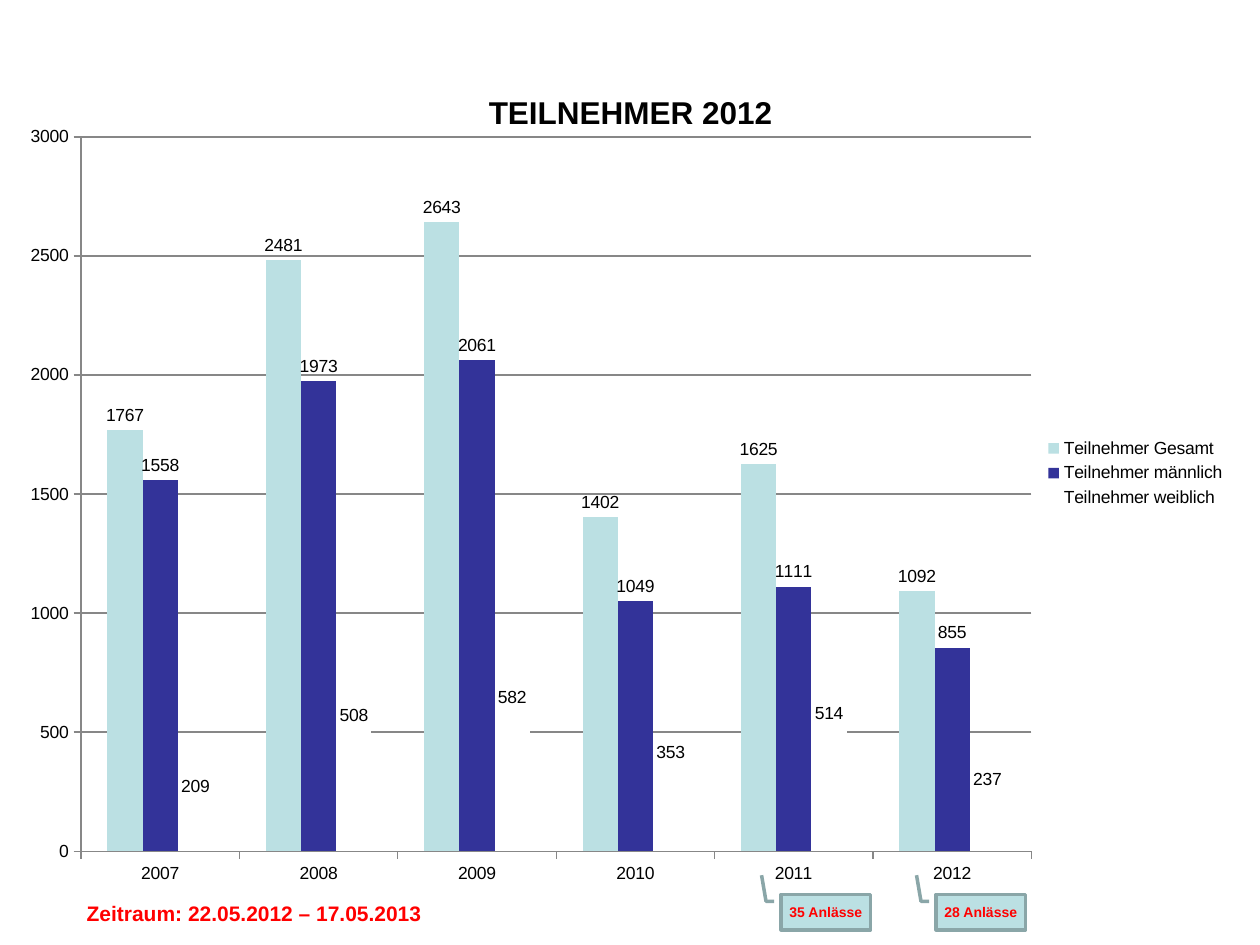
from pptx import Presentation, util as u
from pptx.chart.data import CategoryChartData
from pptx.dml.color import RGBColor
from pptx.enum import chart as ch, shapes, text
from pptx.oxml import parse_xml
from pptx.oxml.ns import nsdecls, qn

BLACK = RGBColor(0x00, 0x00, 0x00)
RED = RGBColor(0xFF, 0x00, 0x00)
AQUA = RGBColor(0xBB, 0xE0, 0xE3)
NAVY = RGBColor(0x33, 0x33, 0x99)
WHITE = RGBColor(0xFF, 0xFF, 0xFF)
SLATE = RGBColor(0x8A, 0xA6, 0xA8)
GREY = RGBColor(0x87, 0x87, 0x87)

YEARS = ["2007", "2008", "2009", "2010", "2011", "2012"]
PARTICIPANTS = [
    ("Teilnehmer Gesamt", AQUA, (1767, 2481, 2643, 1402, 1625, 1092)),
    ("Teilnehmer männlich", NAVY, (1558, 1973, 2061, 1049, 1111, 855)),
    ("Teilnehmer weiblich", WHITE, (209, 508, 582, 353, 514, 237)),
]
FOOT_TOP = u.Inches(7.1)


def style_font(font, size, color, bold=False):
    font.name = "Arial"
    font.size = u.Pt(size)
    font.bold = bold
    font.color.rgb = color


def set_layout(parent, index, target="", **shares):
    """Place a chart part by shares of the chart's size."""
    for old in parent.findall(qn("c:layout")):
        parent.remove(old)
    inner = f'<c:layoutTarget val="{target}"/>' if target else ""
    inner += '<c:xMode val="edge"/><c:yMode val="edge"/>'
    inner += "".join(f'<c:{key} val="{share}"/>' for key, share in shares.items())
    parent.insert(index, parse_xml(
        f'<c:layout {nsdecls("c")}><c:manualLayout>{inner}</c:manualLayout></c:layout>'))


prs = Presentation()
prs.slide_width, prs.slide_height = u.Inches(10), u.Inches(7.5)
slide = prs.slides.add_slide(prs.slide_layouts[6])

# Period and number of events
period = slide.shapes.add_textbox(u.Inches(0.59), FOOT_TOP, u.Inches(8.13), u.Inches(0.3))
period.text_frame.word_wrap = True
period.text_frame.text = "Zeitraum: 22.05.2012 – 17.05.2013"
style_font(period.text_frame.paragraphs[0].runs[0].font, 12, RED, True)

for left, events in ((6.2, "35 Anlässe"), (7.43, "28 Anlässe")):
    callout = slide.shapes.add_shape(
        shapes.MSO_SHAPE.LINE_CALLOUT_2, u.Inches(left), FOOT_TOP, u.Inches(0.71), u.Inches(0.28))
    for i, share in enumerate((0.19, -0.08, 0.19, -0.17, -0.55, -0.22)):
        callout.adjustments[i] = share
    callout.shadow.inherit = False
    callout.fill.solid()
    callout.fill.fore_color.rgb = AQUA
    callout.line.color.rgb = SLATE
    callout.line.width = u.Pt(2)
    frame = callout.text_frame
    frame.margin_left = frame.margin_right = frame.margin_top = frame.margin_bottom = u.Inches(0.01)
    frame.vertical_anchor = text.MSO_ANCHOR.MIDDLE
    frame.text = events
    frame.paragraphs[0].alignment = text.PP_ALIGN.CENTER
    style_font(frame.paragraphs[0].runs[0].font, 8, RED, True)

# Participants per year
data = CategoryChartData()
data.categories = YEARS
for name, _, counts in PARTICIPANTS:
    data.add_series(name, counts)
chart = slide.shapes.add_chart(
    ch.XL_CHART_TYPE.COLUMN_CLUSTERED, u.Inches(0.16), u.Inches(0.42),
    u.Inches(9.67), u.Inches(6.67), data).chart
style_font(chart.font, 10, BLACK)

chart.has_title = True
title = chart.chart_title
title.text_frame.text = "TEILNEHMER 2012"
style_font(title.text_frame.paragraphs[0].runs[0].font, 18, BLACK, True)
set_layout(title.element, 1, x=0.38, y=0.04)
title.element.find(qn("c:overlay")).set("val", "1")

chart.has_legend = True
chart.legend.position = ch.XL_LEGEND_POSITION.RIGHT
chart.legend.include_in_layout = False

plot = chart.plots[0]
plot.gap_width, plot.overlap = 150, 0
plot.vary_by_categories = False
for series, (_, color, _) in zip(plot.series, PARTICIPANTS):
    series.format.fill.solid()
    series.format.fill.fore_color.rgb = color
    labels = series.data_labels
    labels.show_value = True
    labels.position = ch.XL_LABEL_POSITION.OUTSIDE_END
    style_font(labels.font, 10, BLACK)

for axis in (chart.category_axis, chart.value_axis):
    axis.major_tick_mark = ch.XL_TICK_MARK.OUTSIDE
    axis.format.line.color.rgb = GREY
    style_font(axis.tick_labels.font, 10, BLACK)
counts_axis = chart.value_axis
counts_axis.minimum_scale, counts_axis.maximum_scale = 0, 3000
counts_axis.major_unit = 500
counts_axis.has_major_gridlines = True
counts_axis.major_gridlines.format.line.color.rgb = GREY
set_layout(chart.element.chart.plotArea, 0, "inner", x=0.05, y=0.1, w=0.78, h=0.85)

prs.save("out.pptx")
